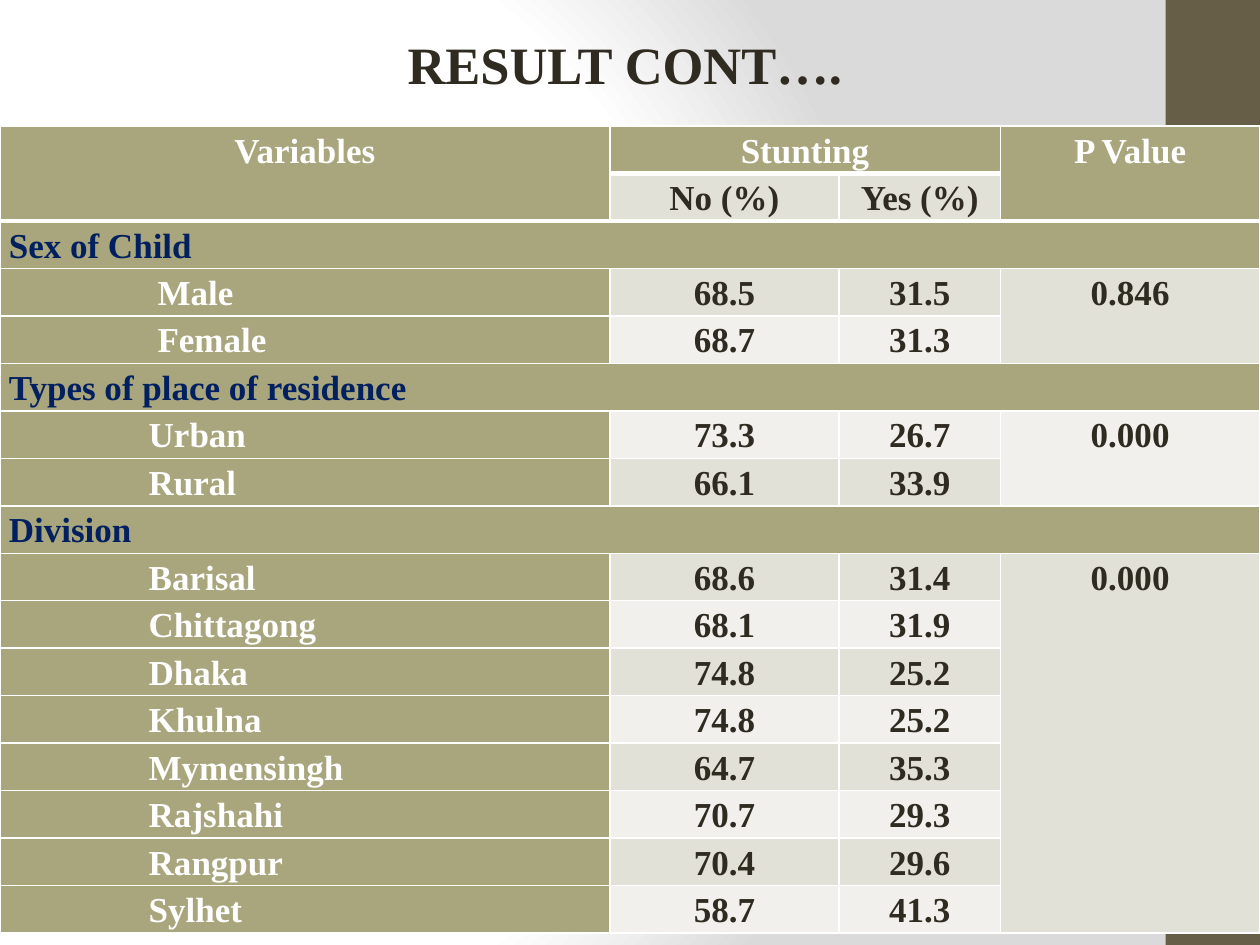
from lxml import etree
from pptx import Presentation
from pptx import util as u
from pptx.dml.color import RGBColor
from pptx.enum import shapes, text
from pptx.oxml import parse_xml
from pptx.oxml.ns import nsdecls, qn

WHITE = RGBColor(0xFF, 0xFF, 0xFF)
GREY = RGBColor(0xDA, 0xDA, 0xDA)
BROWN = RGBColor(0x67, 0x5E, 0x47)
KHAKI = RGBColor(0xA9, 0xA5, 0x7C)
DARK_BAND = RGBColor(0xE2, 0xE1, 0xD7)
LIGHT_BAND = RGBColor(0xF1, 0xF0, 0xEC)
INK = RGBColor(0x2F, 0x2B, 0x20)
NAVY = RGBColor(0x00, 0x20, 0x60)

WIDTH, HEIGHT = u.Inches(10), u.Inches(7.5)
COLUMNS = (4.84, 1.82, 1.28, 2.06)
TABLE_TOP, TABLE_HEIGHT = 1, 6.41
HEADER_ROWS = 2
MARGIN = 0.07
FONT = "Times New Roman"
CENTER, LEFT = text.PP_ALIGN.CENTER, text.PP_ALIGN.LEFT

# heading, p value, indent of the labels, (label, no, yes) rows
GROUPS = [
    ("Sex of Child", "0.846", 1.18,
     [("Male", "68.5", "31.5"), ("Female", "68.7", "31.3")]),
    ("Types of place of residence", "0.000", 1.11,
     [("Urban", "73.3", "26.7"), ("Rural", "66.1", "33.9")]),
    ("Division", "0.000", 1.11,
     [("Barisal", "68.6", "31.4"), ("Chittagong", "68.1", "31.9"),
      ("Dhaka", "74.8", "25.2"), ("Khulna", "74.8", "25.2"),
      ("Mymensingh", "64.7", "35.3"), ("Rajshahi", "70.7", "29.3"),
      ("Rangpur", "70.4", "29.6"), ("Sylhet", "58.7", "41.3")]),
]


def set_values(target, values):
    for name, value in values.items():
        setattr(target, name, value)


def write(paragraph, words, size, color, alignment):
    paragraph.alignment = alignment
    run = paragraph.add_run()
    run.text = words
    set_values(run.font, {"name": FONT, "size": u.Pt(size), "bold": True})
    run.font.color.rgb = color


def set_background(slide):
    """Fill the background with a circular gradient, white to grey."""
    slide.background.fill.solid()
    properties = slide.element.find(".//" + qn("p:bgPr"))
    stops = "".join(
        f'<a:gs pos="{share * 1000}"><a:srgbClr val="{color}"/></a:gs>'
        for share, color in ((0, WHITE), (75, WHITE), (100, GREY)))
    gradient = parse_xml(
        f'<a:gradFill {nsdecls("a")} rotWithShape="1"><a:gsLst>{stops}</a:gsLst>'
        '<a:path path="circle"><a:fillToRect l="20000" t="50000" '
        'r="100000" b="50000"/></a:path></a:gradFill>')
    properties.replace(properties[0], gradient)


def add_side_band(slide):
    left = int(WIDTH * 0.925)
    band = slide.shapes.add_shape(
        shapes.MSO_SHAPE.RECTANGLE, left, 0, WIDTH - left, HEIGHT)
    band.shadow.inherit = False
    band.fill.solid()
    band.fill.fore_color.rgb = BROWN
    band.line.fill.background()


def set_title(slide, words):
    title = slide.shapes.title
    set_values(title, {"left": u.Inches(3), "top": u.Inches(0.17),
                       "width": u.Inches(3.92), "height": u.Inches(0.67)})
    set_values(title.text_frame, {
        "word_wrap": True, "auto_size": text.MSO_AUTO_SIZE.NONE,
        "vertical_anchor": text.MSO_ANCHOR.MIDDLE})
    write(title.text_frame.paragraphs[0], words, 30, INK, CENTER)


def set_borders(cell, top, bottom):
    properties = cell._tc.get_or_add_tcPr()
    edges = {"lnL": 1, "lnR": 1, "lnT": top, "lnB": bottom}
    for position, (edge, points) in enumerate(edges.items()):
        line = etree.Element(qn("a:" + edge), w=str(u.Pt(points)))
        fill = etree.SubElement(line, qn("a:solidFill"))
        etree.SubElement(fill, qn("a:srgbClr"), val=str(WHITE))
        properties.insert(position, line)


def fill_cell(cell, words, fill, color, alignment=CENTER, indent=0):
    set_values(cell, {
        "margin_left": u.Inches(MARGIN + indent), "margin_right": u.Inches(MARGIN),
        "margin_top": 0, "margin_bottom": 0})
    cell.fill.solid()
    cell.fill.fore_color.rgb = fill
    paragraph = cell.text_frame.paragraphs[0]
    paragraph.line_spacing = 1.15
    write(paragraph, words, 20, color, alignment)


def band_color(row):
    return DARK_BAND if row % 2 else LIGHT_BAND


def fill_header(table):
    for column, words, last in ((0, "Variables", (1, 0)), (1, "Stunting", (0, 2)),
                                (3, "P Value", (1, 3))):
        table.cell(0, column).merge(table.cell(*last))
        fill_cell(table.cell(0, column), words, KHAKI, WHITE)
    for column, words in ((1, "No (%)"), (2, "Yes (%)")):
        fill_cell(table.cell(1, column), words, band_color(1), INK)


def fill_group(table, row, heading, p_value, indent, records):
    """Write one group from the given row on and return the next free row."""
    table.cell(row, 0).merge(table.cell(row, 3))
    fill_cell(table.cell(row, 0), heading, KHAKI, NAVY, LEFT)
    first, end = row + 1, row + 1 + len(records)
    table.cell(first, 3).merge(table.cell(end - 1, 3))
    fill_cell(table.cell(first, 3), p_value, band_color(first), INK)
    for index, (label, *shares) in enumerate(records, first):
        fill_cell(table.cell(index, 0), label, KHAKI, WHITE, LEFT, indent)
        for column, share in enumerate(shares, 1):
            fill_cell(table.cell(index, column), share, band_color(index), INK)
    return end


def add_result_table(slide):
    row_count = HEADER_ROWS + sum(1 + len(group[-1]) for group in GROUPS)
    table = slide.shapes.add_table(
        row_count, len(COLUMNS), 0, u.Inches(TABLE_TOP), WIDTH,
        u.Inches(TABLE_HEIGHT)).table
    for column, width in zip(table.columns, COLUMNS):
        column.width = u.Inches(width)
    for table_row in table.rows:
        table_row.height = u.Inches(TABLE_HEIGHT / row_count)

    fill_header(table)
    row = HEADER_ROWS
    for group in GROUPS:
        row = fill_group(table, row, *group)

    for index, table_row in enumerate(table.rows):
        top = 3 if 0 < index <= HEADER_ROWS else 1
        bottom = 3 if index < HEADER_ROWS else 1
        for cell in table_row.cells:
            set_borders(cell, top, bottom)


def main():
    presentation = Presentation()
    set_values(presentation, {"slide_width": WIDTH, "slide_height": HEIGHT})
    slide = presentation.slides.add_slide(presentation.slide_layouts[5])
    set_background(slide)
    add_side_band(slide)
    set_title(slide, "RESULT CONT….")
    add_result_table(slide)
    presentation.save("out.pptx")


if __name__ == "__main__":
    main()
